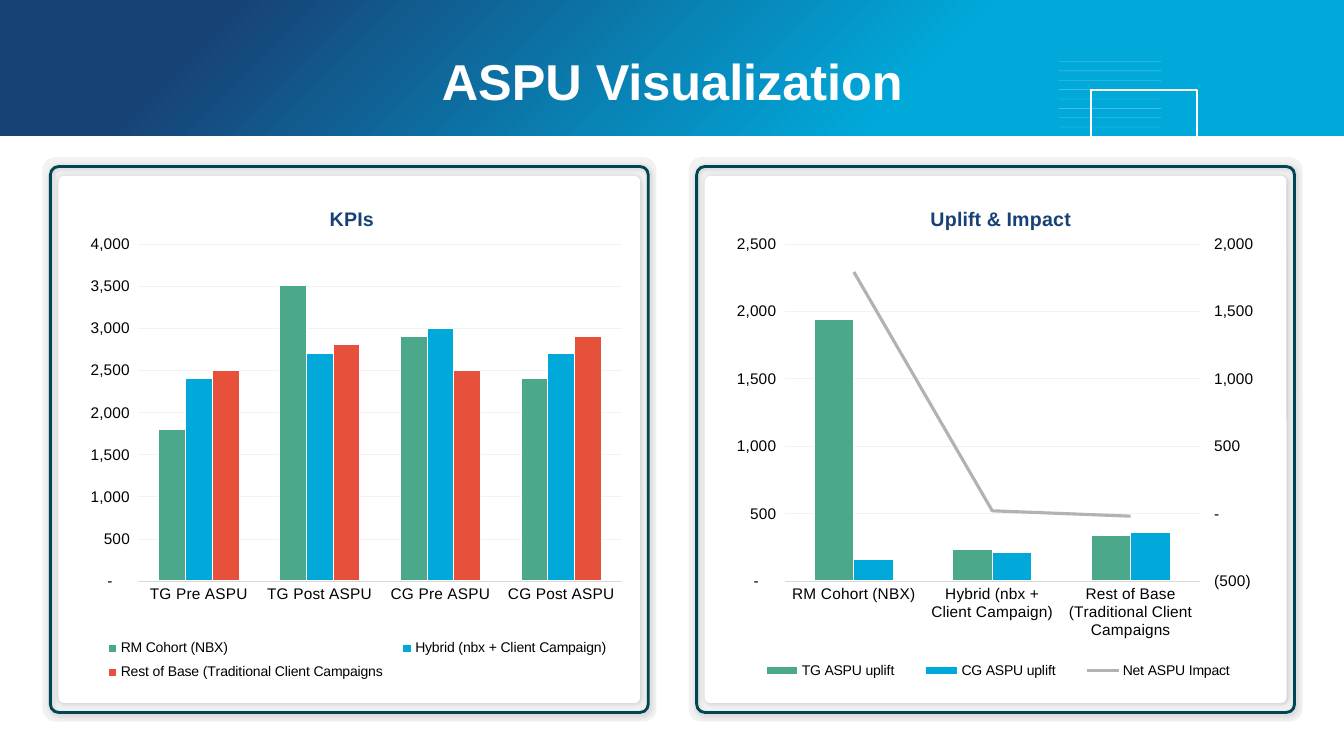
from dataclasses import dataclass

from pptx import Presentation
from pptx.chart.axis import ValueAxis
from pptx.chart.data import CategoryChartData
from pptx.dml.color import RGBColor
from pptx.enum.chart import XL_CHART_TYPE, XL_LEGEND_POSITION, XL_MARKER_STYLE, XL_TICK_MARK
from pptx.enum.shapes import MSO_CONNECTOR, MSO_SHAPE
from pptx.enum.text import PP_ALIGN
from pptx.oxml import parse_xml
from pptx.oxml.ns import nsdecls, qn
from pptx.util import Inches, Pt

RECTANGLE = MSO_SHAPE.RECTANGLE
ROUNDED = MSO_SHAPE.ROUNDED_RECTANGLE
STRAIGHT = MSO_CONNECTOR.STRAIGHT
COLUMNS = XL_CHART_TYPE.COLUMN_CLUSTERED
LEGEND_BOTTOM = XL_LEGEND_POSITION.BOTTOM
NO_MARKER = XL_MARKER_STYLE.NONE
NO_TICK = XL_TICK_MARK.NONE
TICK_OUT = XL_TICK_MARK.OUTSIDE
CENTER = PP_ALIGN.CENTER


@dataclass(frozen=True)
class Theme:
    font: str = "Arial"
    title_size: int = 36
    heading_size: int = 14
    axis_size: int = 11
    legend_size: int = 10
    navy: str = "174276"
    cyan: str = "00A9DA"
    green: str = "4CA88A"
    red: str = "E7513C"
    gray: str = "B0B2B5"
    frame: str = "004554"
    panel: str = "F2F2F2"
    axis: str = "D9D9D9"
    white: str = "FFFFFF"
    black: str = "000000"


THEME = Theme()
NUMBER_FORMAT = '_(* #,##0_);_(* \\(#,##0\\);_(* "-"??_);_(@_)'
COHORTS = ["RM Cohort (NBX)", "Hybrid (nbx + Client Campaign)",
           "Rest of Base (Traditional Client Campaigns"]
SERIES_COLORS = [THEME.green, THEME.cyan, THEME.red]


def rgb(color):
    return RGBColor.from_string(color)


def style_font(font, size, color, bold=False):
    font.name = THEME.font
    font.size = Pt(size)
    font.bold = bold
    font.color.rgb = rgb(color)


def style_line(line, color, width):
    line.color.rgb = rgb(color)
    line.width = Pt(width)


def add_box(page, kind, left, top, width, height, fill=None, line=None, line_width=1):
    box = page.shapes.add_shape(kind, Inches(left), Inches(top), Inches(width), Inches(height))
    box.shadow.inherit = False
    if fill:
        box.fill.solid()
        box.fill.fore_color.rgb = rgb(fill)
    else:
        box.fill.background()
    if line:
        style_line(box.line, line, line_width)
    else:
        box.line.fill.background()
    return box


def add_shadow(box):
    effects = box._element.spPr.find(qn("a:effectLst"))
    effects.append(parse_xml(
        f'<a:outerShdw {nsdecls("a")} blurRad="50800" dist="12700" dir="2700000">'
        f'<a:srgbClr val="{THEME.black}"><a:alpha val="20000"/></a:srgbClr></a:outerShdw>'))


def add_header(page):
    backdrop = add_box(page, RECTANGLE, 0, 0, 13.33, 7.5, THEME.navy)
    backdrop.fill.gradient()
    backdrop.fill.gradient_angle = 315
    stops = [(0.11, THEME.navy), (0.48, THEME.cyan)]
    for stop, (position, color) in zip(backdrop.fill.gradient_stops, stops):
        stop.position = position
        stop.color.rgb = rgb(color)
    add_box(page, RECTANGLE, 0, 1.35, 13.33, 6.15, THEME.white)
    for row in range(8):
        add_faint_line(page, 10.5, 11.52, 0.61 + row * 0.093)
    add_box(page, RECTANGLE, 10.82, 0.89, 1.05, 1.05, line=THEME.white, line_width=1.19)


def add_faint_line(page, start, end, top):
    line = page.shapes.add_connector(STRAIGHT, Inches(start), Inches(top), Inches(end), Inches(top))
    style_line(line.line, THEME.white, 0.25)
    properties = line._element.spPr
    color = properties.find(".//" + qn("a:srgbClr"))
    color.append(parse_xml(f'<a:alpha {nsdecls("a")} val="40000"/>'))
    properties.append(parse_xml(f'<a:effectLst {nsdecls("a")}/>'))


def add_title(page, text):
    box = page.shapes.add_textbox(Inches(0.49), Inches(0.39), Inches(12.36), Inches(0.64))
    frame = box.text_frame
    frame.word_wrap = True
    frame.margin_top = Inches(0.11)
    para = frame.paragraphs[0]
    para.text = text
    para.alignment = CENTER
    style_font(para.font, THEME.title_size, THEME.white, True)


def add_panel(page, left):
    layers = [(0, 0.023, THEME.panel, None), (0.16, 0.011, THEME.white, None),
              (0.08, 0.015, None, THEME.frame)]
    for inset, radius, fill, line in layers:
        box = add_box(page, ROUNDED, left + inset, 1.56 + inset * 1.15,
                      6.09 - 2 * inset, 5.6 - 2.3 * inset, fill, line, 2)
        box.adjustments[0] = radius
        if inset:
            add_shadow(box)


def place_part(part, index, **fractions):
    old = part.find(qn("c:layout"))
    if old is not None:
        part.remove(old)
    inner = '<c:layoutTarget val="inner"/>' if part.tag == qn("c:plotArea") else ""
    modes = "".join(f'<c:{axis}Mode val="edge"/>' for axis in "xy")
    values = "".join(f'<c:{name} val="{value}"/>' for name, value in fractions.items())
    part.insert(index, parse_xml(
        f'<c:layout {nsdecls("c")}><c:manualLayout>{inner}{modes}{values}'
        '</c:manualLayout></c:layout>'))


def style_value_axis(axis, low, high, tick=NO_TICK):
    axis.minimum_scale = low
    axis.maximum_scale = high
    axis.major_unit = 500
    axis.major_tick_mark = tick
    axis.minor_tick_mark = NO_TICK
    axis.tick_labels.number_format = NUMBER_FORMAT
    axis.tick_labels.number_format_is_linked = False
    style_font(axis.tick_labels.font, THEME.axis_size, THEME.black)
    axis.format.line.fill.background()


def add_columns(page, left, title, title_x, categories, series, top_value, plot, legend):
    data = CategoryChartData(number_format="General")
    data.categories = categories
    for name, values in series:
        data.add_series(name, values)
    chart = page.shapes.add_chart(COLUMNS, Inches(left), Inches(1.81),
                                  Inches(5.64), Inches(5.07), data).chart
    style_font(chart.font, THEME.legend_size, THEME.black)
    para = chart.chart_title.text_frame.paragraphs[0]
    para.text = title
    style_font(para.font, THEME.heading_size, THEME.navy, True)
    chart.chart_title.include_in_layout = False
    chart.has_legend = True
    chart.legend.position = LEGEND_BOTTOM
    chart.legend.include_in_layout = False
    style_font(chart.legend.font, THEME.legend_size, THEME.black)
    place_part(chart.chart_title._element, 1, x=title_x, y=0.04)
    place_part(chart.legend._element, 1, **legend)
    place_part(chart._chartSpace.chart.plotArea, 0, **plot)

    columns = chart.plots[0]
    columns.gap_width = 150
    columns.overlap = 0
    columns.vary_by_categories = False
    for bars, color in zip(columns.series, SERIES_COLORS):
        bars.format.fill.solid()
        bars.format.fill.fore_color.rgb = rgb(color)
        style_line(bars.format.line, THEME.white, 0.75)
    chart.category_axis.major_tick_mark = NO_TICK
    style_font(chart.category_axis.tick_labels.font, THEME.axis_size, THEME.black)
    style_line(chart.category_axis.format.line, THEME.axis, 0.25)
    style_value_axis(chart.value_axis, 0, top_value)
    style_line(chart.value_axis.major_gridlines.format.line, THEME.panel, 0.25)
    return chart


def move_last_series_to_right_axis(chart, low, high):
    area = chart._chartSpace.chart.plotArea
    columns = area.find(qn("c:barChart"))
    series = columns.findall(qn("c:ser"))[-1]
    for tag in ("c:invertIfNegative", "c:spPr"):
        for extra in series.findall(qn(tag)):
            series.remove(extra)
    lines = parse_xml(
        f'<c:lineChart {nsdecls("c")}><c:grouping val="standard"/><c:varyColors val="0"/>'
        '<c:marker val="1"/><c:axId val="50001"/><c:axId val="50002"/></c:lineChart>')
    lines.insert(2, series)
    columns.addnext(lines)
    for tag, own, other, hidden, side, crosses in (
            ("valAx", 50002, 50001, 0, "r", "max"), ("catAx", 50001, 50002, 1, "b", "autoZero")):
        area.append(parse_xml(
            f'<c:{tag} {nsdecls("c")}><c:axId val="{own}"/><c:scaling>'
            f'<c:orientation val="minMax"/></c:scaling><c:delete val="{hidden}"/>'
            f'<c:axPos val="{side}"/><c:tickLblPos val="nextTo"/>'
            f'<c:crossAx val="{other}"/><c:crosses val="{crosses}"/></c:{tag}>'))
    style_value_axis(ValueAxis(area.findall(qn("c:valAx"))[-1]), low, high, TICK_OUT)
    impact = chart.plots[1].series[0]
    impact.smooth = False
    impact.marker.style = NO_MARKER
    style_line(impact.format.line, THEME.gray, 2.25)


def main():
    deck = Presentation()
    deck.slide_width, deck.slide_height = Inches(13.33), Inches(7.5)
    page = deck.slides.add_slide(deck.slide_layouts[6])
    add_header(page)
    add_title(page, "ASPU Visualization")
    for left in (0.42, 6.83):
        add_panel(page, left)
    kpis = zip(COHORTS, [(1800, 3500, 2900, 2400), (2400, 2700, 3000, 2700),
                         (2500, 2800, 2500, 2900)])
    add_columns(page, 0.64, "KPIs", 0.46,
                ["TG Pre ASPU", "TG Post ASPU", "CG Pre ASPU", "CG Post ASPU"], kpis, 4000,
                dict(x=0.13, y=0.12, w=0.85, h=0.66), dict(x=0.05, y=0.88, w=0.93, h=0.11))
    uplift = [("TG ASPU uplift", (1940, 230, 340)), ("CG ASPU uplift", (160, 210, 360)),
              ("Net ASPU Impact", (1790, 20, -20))]
    chart = add_columns(page, 7.05, "Uplift & Impact", 0.38, COHORTS, uplift, 2500,
                        dict(x=0.13, y=0.12, w=0.73, h=0.66),
                        dict(x=0.05, y=0.93, w=0.91, h=0.05))
    move_last_series_to_right_axis(chart, -500, 2000)
    deck.save("out.pptx")


if __name__ == "__main__":
    main()
